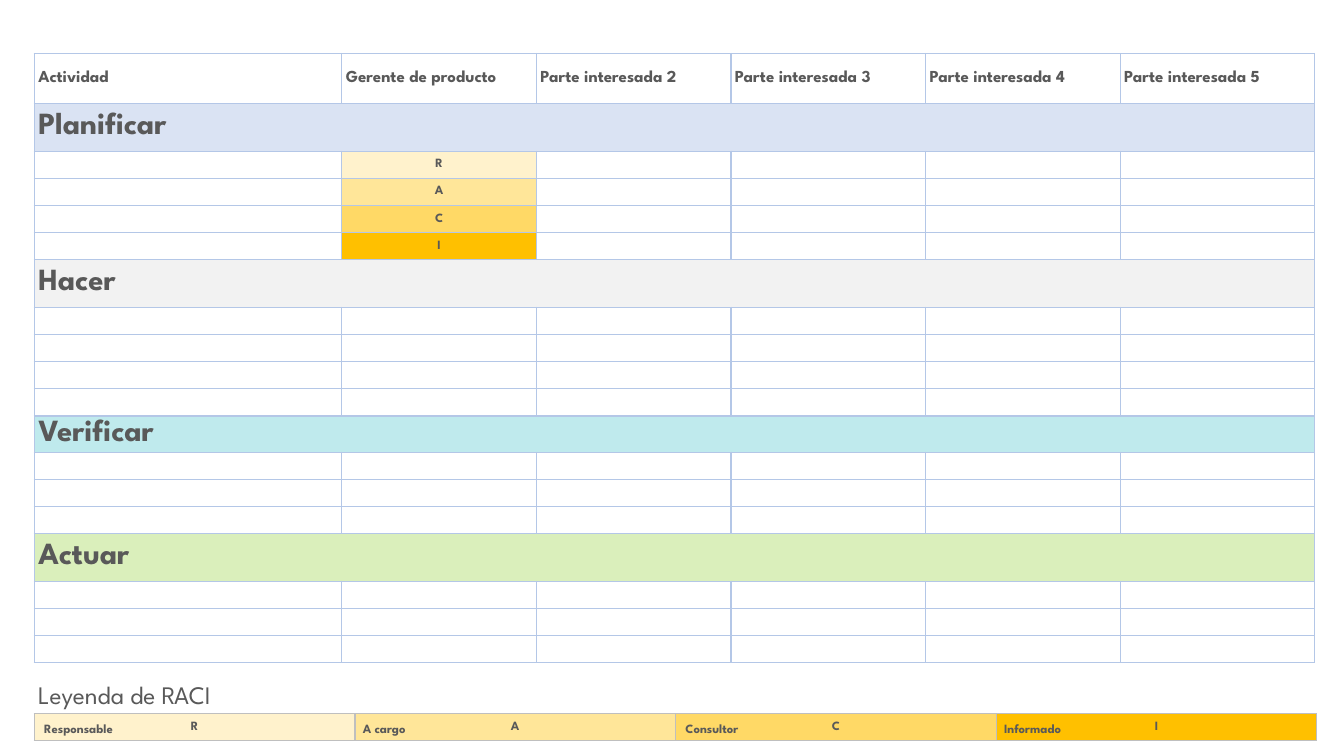
from lxml.etree import SubElement
from pptx import Presentation
from pptx.dml.color import RGBColor
from pptx.enum.text import MSO_ANCHOR as Anchor, MSO_AUTO_SIZE as AutoSize, PP_ALIGN as Align
from pptx.oxml import parse_xml
from pptx.oxml.ns import nsdecls, qn
from pptx.util import Inches, Pt

FONT = "League Spartan"
COLORS = {
    "text": "595959", "white": "FFFFFF", "grid": "B4C7E7", "legend_grid": "BFBFBF",
    "R": "FFF2CC", "A": "FFE699", "C": "FFD966", "I": "FFC000",
    "Planificar": "DAE3F3", "Hacer": "F2F2F2", "Verificar": "BFEAED", "Actuar": "DAEFBB",
}
HEADERS = ["Actividad", "Gerente de producto", "Parte interesada 2",
           "Parte interesada 3", "Parte interesada 4", "Parte interesada 5"]
PHASES = [
    ("Planificar", 0.47, ["R", "A", "C", "I"]),
    ("Hacer", 0.47, [""] * 4),
    ("Verificar", 0.34, [""] * 3),
    ("Actuar", 0.47, [""] * 3),
]
LEGEND = [("R", "Responsable", 0.34), ("A", "A cargo", 3.5),
          ("C", "Consultor", 6.7), ("I", "Informado", 9.86)]
LEGEND_TITLE = "Leyenda de RACI"

LEFT, WIDTH = 0.34, 12.72
MATRIX_TOP, LEGEND_TOP = 0.53, 7.08
HEADER_HEIGHT, ROW_HEIGHT = 0.5, 0.27
COLUMN_WIDTHS = [3.05] + [1.93] * 5
CELL_FORMAT = {"vertical_anchor": Anchor.MIDDLE, "margin_left": Inches(0.04),
               "margin_right": Inches(0.04), "margin_top": Inches(0.04),
               "margin_bottom": Inches(0.04)}
LABEL_FORMAT = {"word_wrap": True, "auto_size": AutoSize.SHAPE_TO_FIT_TEXT}


def apply_format(target, values):
    for name, value in values.items():
        setattr(target, name, value)


def write(paragraph, text, size, bold=True, align=Align.LEFT):
    paragraph.alignment = align
    if not text:
        SubElement(paragraph._p, qn("a:endParaRPr"), sz=str(size * 100))
        return
    run = paragraph.add_run()
    run.text = text
    apply_format(run.font, {"name": FONT, "size": Pt(size), "bold": bold})
    run.font.color.rgb = RGBColor.from_string(COLORS["text"])


def fill_cell(cell, text, size, fill, grid, align=Align.LEFT):
    apply_format(cell, CELL_FORMAT)
    cell.fill.solid()
    cell.fill.fore_color.rgb = RGBColor.from_string(COLORS[fill])
    write(cell.text_frame.paragraphs[0], text, size, align=align)
    properties = cell._tc.get_or_add_tcPr()
    for position, side in enumerate(("lnL", "lnR", "lnT", "lnB")):
        properties.insert(position, parse_xml(
            f'<a:{side} {nsdecls("a")} w="12700"><a:solidFill>'
            f'<a:srgbClr val="{COLORS[grid]}"/></a:solidFill></a:{side}>'))


def add_grid(slide, top, widths, heights):
    grid = slide.shapes.add_table(
        len(heights), len(widths), Inches(LEFT), Inches(top),
        Inches(WIDTH), Inches(sum(heights))).table
    apply_format(grid, {"first_row": False, "horz_banding": False})
    for column, width in zip(grid.columns, widths):
        column.width = Inches(width)
    for row, height in zip(grid.rows, heights):
        row.height = Inches(height)
    return grid


def add_label(slide, text, left, top, width, height, size, bold):
    frame = slide.shapes.add_textbox(
        Inches(left), Inches(top), Inches(width), Inches(height)).text_frame
    apply_format(frame, LABEL_FORMAT)
    write(frame.paragraphs[0], text, size, bold)


def add_matrix(slide):
    heights = [HEADER_HEIGHT]
    for _, phase_height, roles in PHASES:
        heights += [phase_height] + [ROW_HEIGHT] * len(roles)
    matrix = add_grid(slide, MATRIX_TOP, COLUMN_WIDTHS, heights)
    last = len(HEADERS) - 1
    for column, header in enumerate(HEADERS):
        fill_cell(matrix.cell(0, column), header, 12, "white", "grid")
    row = 1
    for phase, _, roles in PHASES:
        for column in range(len(HEADERS)):
            fill_cell(matrix.cell(row, column), "" if column else phase,
                      9 if column else 22, phase, "grid")
        matrix.cell(row, 0).merge(matrix.cell(row, last))
        for row, role in enumerate(roles, row + 1):
            for column in range(len(HEADERS)):
                text = role if column == 1 else ""
                fill_cell(matrix.cell(row, column), text, 9, text or "white",
                          "grid", Align.CENTER)
        row += 1


def add_legend(slide):
    legend = add_grid(slide, LEGEND_TOP, [WIDTH / len(LEGEND)] * len(LEGEND), [ROW_HEIGHT])
    for column, (role, meaning, left) in enumerate(LEGEND):
        fill_cell(legend.cell(0, column), role, 9, role, "legend_grid", Align.CENTER)
        add_label(slide, meaning, left, 7.1, 3.16, 0.25, 9, True)
    add_label(slide, LEGEND_TITLE, 0.28, 6.69, 5.14, 0.4, 18, False)


def main():
    deck = Presentation()
    apply_format(deck, {"slide_width": Inches(13.33), "slide_height": Inches(7.5)})
    slide = deck.slides.add_slide(deck.slide_layouts[6])
    add_matrix(slide)
    add_legend(slide)
    deck.save("out.pptx")


if __name__ == "__main__":
    main()
